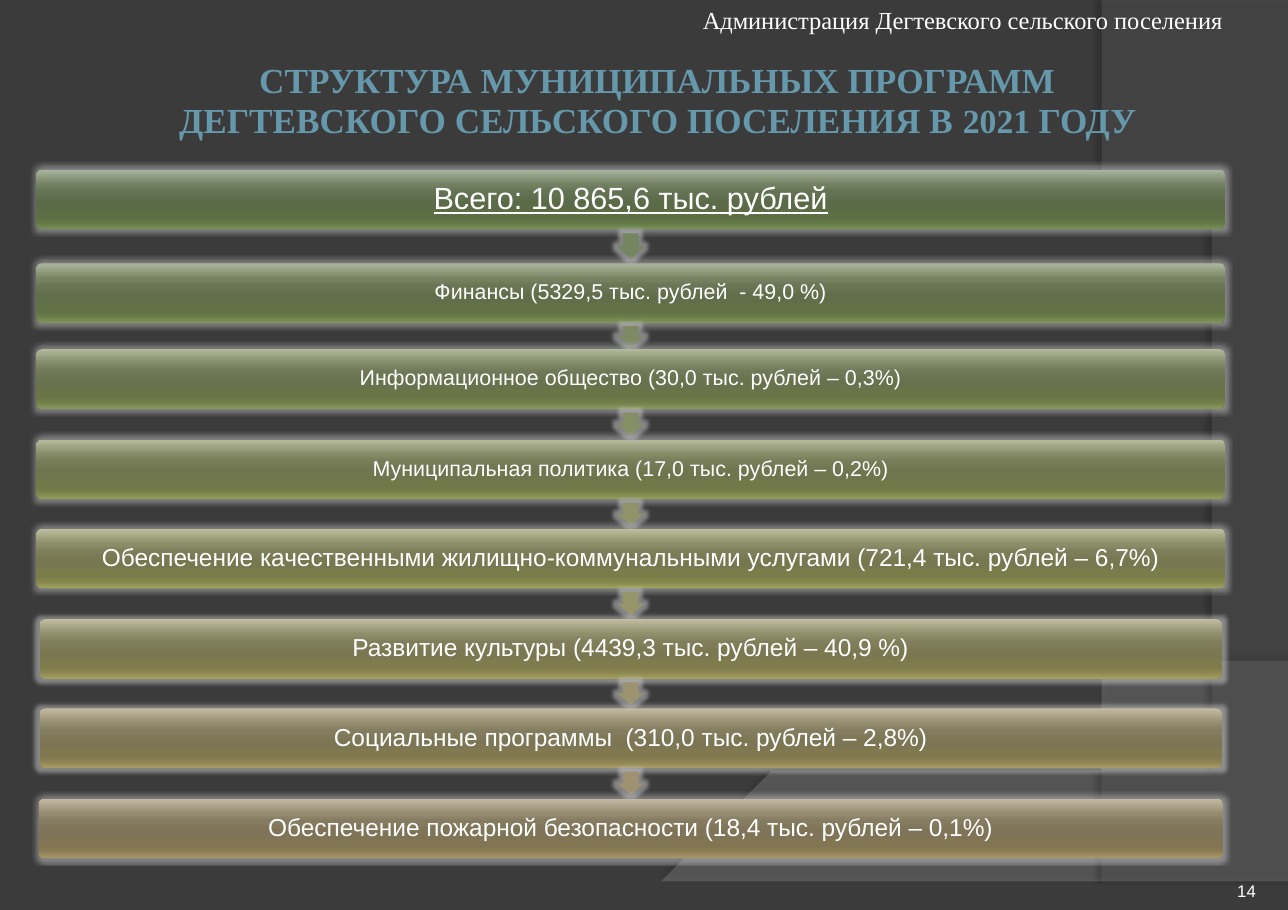
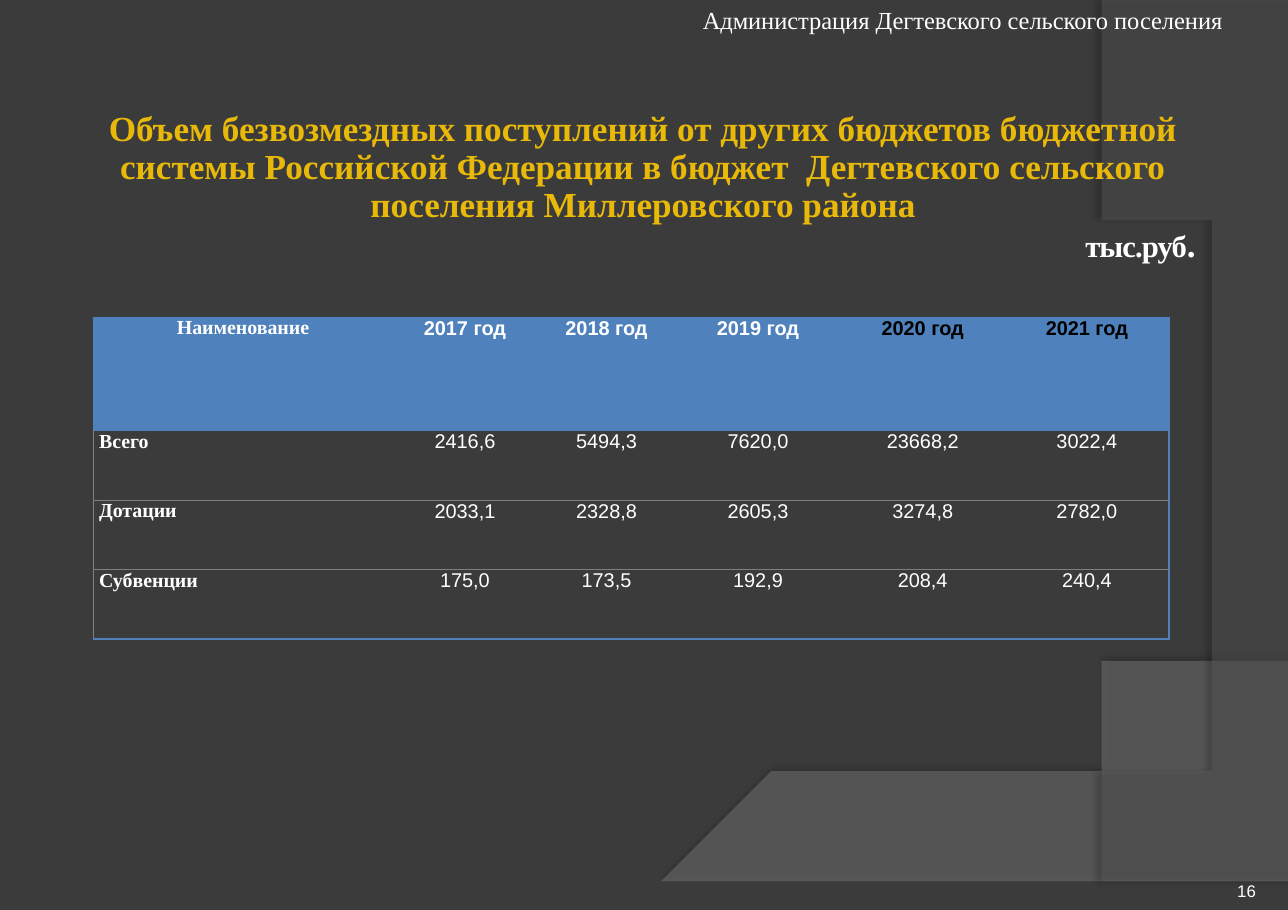
"""Build two budget slides: the programme structure and the table of transfers."""
import pptx
import pptx.util
import pptx.dml.color
import pptx.enum.shapes
import pptx.enum.text
import pptx.oxml
import pptx.oxml.ns

Inches, Pt = pptx.util.Inches, pptx.util.Pt
RGBColor = pptx.dml.color.RGBColor
SHAPE = pptx.enum.shapes.MSO_SHAPE
ALIGN = pptx.enum.text.PP_ALIGN
ANCHOR = pptx.enum.text.MSO_ANCHOR
qn = pptx.oxml.ns.qn
NS = pptx.oxml.ns.nsdecls("a")

DARK = RGBColor(0x3B, 0x3B, 0x3B)
WAVE = RGBColor(0x7F, 0x7F, 0x7F)
ARC = RGBColor(0x5E, 0x5E, 0x5E)
WHITE = RGBColor(0xFF, 0xFF, 0xFF)
BLACK = RGBColor(0, 0, 0)
TEAL = RGBColor(0x65, 0x98, 0xAA)
GOLD = RGBColor(0xE9, 0xB9, 0x0A)
BLUE = RGBColor(0x4F, 0x81, 0xBD)
GLOW = RGBColor(0xD0, 0xD0, 0xD0)
SERIF, SANS = "Times New Roman", "Arial"


def put(tf, text, size=16, color=WHITE, font=SANS, bold=False, underline=False,
        align=ALIGN.LEFT, spacing=None, anchor=None, inset=None):
    p = tf.paragraphs[0]
    p.alignment = align
    if spacing is not None:
        p.line_spacing = spacing
    if anchor is not None:
        tf.vertical_anchor = anchor
    if inset is not None:
        tf.word_wrap = True
        tf.auto_size = pptx.enum.text.MSO_AUTO_SIZE.NONE
        tf.margin_left = tf.margin_right = Inches(inset)
        tf.margin_top = tf.margin_bottom = Inches(inset)
    r = p.add_run()
    r.text = text
    r.font.size, r.font.name = Pt(size), font
    r.font.bold, r.font.underline = bold, underline
    r.font.color.rgb = color
    return r


def add_effect(shape, tag, color, alpha, **attrs):
    shape.shadow.inherit = False
    values = " ".join(f'{k}="{v}"' for k, v in attrs.items())
    shape.element.spPr.find(qn("a:effectLst")).append(pptx.oxml.parse_xml(
        f'<a:{tag} {NS} {values}><a:srgbClr val="{color}">'
        f'<a:alpha val="{alpha * 1000}"/></a:srgbClr></a:{tag}>'))


prs = pptx.Presentation()
prs.slide_width, prs.slide_height = Inches(11.69), Inches(8.26)
master = prs.slide_master
master.background.fill.solid()
master.background.fill.fore_color.rgb = DARK
slides = [prs.slides.add_slide(prs.slide_layouts[5]) for _ in range(2)]

curves = [
    (WAVE, 45, 35, 3.5, 270, [(0, 7.77), (0, 8.27), (11.69, 8.27)],
     [(11.69, 5.73), (6.54, 8.03), (4.57, 7.92), (0, 7.77)]),
    (ARC, 40, 45, 4, 180, [(11.69, 0.02), (11.69, 8.26)],
     [(9.6, 8.26), (10.93, 6.82), (11.9, 3.31), (9.36, 0)]),
]
for i, (color, alpha, shade, dist, angle, corners, bezier) in enumerate(curves):
    points = list(corners)
    for step in range(61):
        t = step / 60
        weights = ((1 - t) ** 3, 3 * t * (1 - t) ** 2, 3 * t * t * (1 - t), t ** 3)
        points.append(tuple(sum(w * pt[axis] for w, pt in zip(weights, bezier))
                            for axis in (0, 1)))
    builder = slides[0].shapes.build_freeform(*points[0], scale=Inches(1))
    builder.add_line_segments(points[1:], close=True)
    sp = builder.convert_to_shape()
    sp.line.fill.background()
    sp.fill.solid()
    sp.fill.fore_color.rgb = color
    sp.element.spPr.find(".//" + qn("a:srgbClr")).append(
        pptx.oxml.parse_xml(f'<a:alpha {NS} val="{alpha * 1000}"/>'))
    add_effect(sp, "outerShdw", BLACK, shade, blurRad=Pt(4), dist=Pt(dist),
               dir=angle * 60000, rotWithShape=0)
    sp.element.nvSpPr.cNvPr.id = 20 + i
    master.element.cSld.spTree.insert(2 + i, sp.element)

titles = [
    ((1.51, 0.55, 8.92, 0.73), TEAL, 26,
     [("СТРУКТУРА МУНИЦИПАЛЬНЫХ ПРОГРАММ ДЕГТЕВСКОГО СЕЛЬСКОГО ПОСЕЛЕНИЯ В ", 23),
      ("2021 ", 22), ("ГОДУ", 23)]),
    ((0.79, 1, 10.1, 1.05), GOLD, 25,
     [("Объем безвозмездных поступлений от других бюджетов бюджетной системы "
       "Российской Федерации в бюджет  Дегтевского сельского поселения "
       "Миллеровского района", 23)]),
]
for s, number, (box, color, spacing, runs) in zip(slides, ("14", "16"), titles):
    title = s.shapes.title
    title.left, title.top, title.width, title.height = map(Inches, box)
    for text, size in runs:
        put(title.text_frame, text, size=size, color=color, font=SERIF, bold=True,
            align=ALIGN.CENTER, spacing=Pt(spacing), anchor=ANCHOR.TOP, inset=0)
    header = s.shapes.add_textbox(Inches(6.28), 0, Inches(5.42), Inches(0.37))
    header.text_frame.word_wrap = True
    put(header.text_frame, "Администрация Дегтевского сельского поселения", font=SERIF)
    page = s.shapes.add_textbox(Inches(10.43), Inches(7.74), Inches(0.97), Inches(0.44))
    put(page.text_frame, number, size=11, align=ALIGN.RIGHT, anchor=ANCHOR.BOTTOM, inset=0)

s = slides[0]
STOPS = (0, 25, 38, 55, 80, 88, 100)
CENTER, BAR_H = 5.725, 0.54
bars = [
    (1.54, 10.79, 20, "Всего: 10 865,6 тыс. рублей",
     "A9B59D 728062 647254 5B6B48 5B6E44 607645 769058", "748560"),
    (2.39, 10.79, 14, "Финансы (5329,5 тыс. рублей  - 49,0 %)",
     "AEB89D 788464 6A7555 616E4A 627146 687A47 7F9459", "7D8A63"),
    (3.17, 10.79, 14, "Информационное общество (30,0 тыс. рублей – 0,3%)",
     "B2BA9E 7E8766 707857 68724C 697547 707D48 89995B", "868E65"),
    (3.99, 10.79, 14, "Муниципальная политика (17,0 тыс. рублей – 0,2%)",
     "B8BC9F 858A67 767B58 6F754D 717849 79814A 949D5D", "8F9368"),
    (4.8, 10.79, 16, "Обеспечение качественными жилищно-коммунальными услугами "
     "(721,4 тыс. рублей – 6,7%)",
     "BEBF9F 8C8E69 7D7E5A 77784F 7A7C4A 83854B 9FA25F", "97966B"),
    (5.62, 10.73, 16, "Развитие культуры (4439,3 тыс. рублей – 40,9 %)",
     "C1BEA0 908E6B 817E5C 7B7851 7E7B4C 87834E A5A062", "9B946F"),
    (6.43, 10.73, 16, "Социальные программы  (310,0 тыс. рублей – 2,8%)",
     "C3BCA2 938C6E 837C5E 7D7654 80784F 8A8051 A89C65", "9E9273"),
    (7.25, 10.75, 16, "Обеспечение пожарной безопасности (18,4 тыс. рублей – 0,1%)",
     "C4BAA3 958B71 857B60 7F7457 827552 8C7C54 AA9868", None),
]
for i, (top, width, size, text, shades, arrow_color) in enumerate(bars):
    bar = s.shapes.add_shape(SHAPE.ROUNDED_RECTANGLE, Inches(CENTER - width / 2),
                             Inches(top), Inches(width), Inches(BAR_H))
    bar.adjustments[0] = 0.1
    bar.line.fill.background()
    bar.fill.gradient()
    bar.fill.gradient_angle = 270
    stops = bar.element.spPr.find(".//" + qn("a:gsLst"))
    stops.clear()
    for pos, shade in zip(STOPS, shades.split()):
        stops.append(pptx.oxml.parse_xml(
            f'<a:gs {NS} pos="{pos * 1000}"><a:srgbClr val="{shade}"/></a:gs>'))
    add_effect(bar, "glow", GLOW, 50, rad=Pt(5))
    put(bar.text_frame, text, size=size, underline=i == 0, align=ALIGN.CENTER,
        spacing=0.9, anchor=ANCHOR.MIDDLE, inset=0.07)
    if arrow_color:
        bottom = top + BAR_H
        gap = bars[i + 1][0] - bottom
        arrow = s.shapes.add_shape(SHAPE.DOWN_ARROW, Inches(CENTER - 0.12),
                                   Inches(bottom + gap / 8), Inches(0.24),
                                   Inches(gap * 0.75))
        arrow.adjustments[0], arrow.adjustments[1] = 0.6, 0.5
        arrow.line.fill.background()
        arrow.fill.solid()
        arrow.fill.fore_color.rgb = RGBColor.from_string(arrow_color)
        add_effect(arrow, "glow", GLOW, 50, rad=Pt(5))

s = slides[1]
unit = s.shapes.add_textbox(Inches(9.85), Inches(2.05), Inches(1.42), Inches(0.35))
r = put(unit.text_frame, "тыс.руб", size=20, font=SERIF, bold=True,
        spacing=Pt(25), inset=0)
r.font._element.set("spc", "-60")
put(unit.text_frame, ".", size=23, font=SERIF, bold=True, spacing=Pt(25))

rows = [
    ("Наименование", "2017 год", "2018 год", "2019 год", "2020 год", "2021 год"),
    ("Всего", "2416,6", "5494,3", "7620,0", "23668,2", "3022,4"),
    ("Дотации", "2033,1", "2328,8", "2605,3", "3274,8", "2782,0"),
    ("Субвенции", "175,0", "173,5", "192,9", "208,4", "240,4"),
]
widths, heights = (2.71, 1.32, 1.25, 1.5, 1.49, 1.49), (1.03, 0.63, 0.63, 0.63)
table = s.shapes.add_table(len(rows), len(widths), Inches(0.85), Inches(2.88),
                           Inches(sum(widths)), Inches(sum(heights))).table
table.first_row = table.horz_banding = False
for col, width in zip(table.columns, widths):
    col.width = Inches(width)
for row, height in zip(table.rows, heights):
    row.height = Inches(height)
last_row, last_col = len(rows) - 1, len(widths) - 1
for y, row in enumerate(rows):
    for x, text in enumerate(row):
        cell = table.cell(y, x)
        cell.margin_left = cell.margin_right = Inches(0.05)
        cell.margin_top = cell.margin_bottom = 0
        put(cell.text_frame, text, size=13, font=SANS if x else SERIF,
            bold=x == 0 or y == 0, color=BLACK if y == 0 and x > 3 else WHITE,
            align=ALIGN.CENTER if x or y == 0 else ALIGN.LEFT)
        if y == 0:
            cell.fill.solid()
            cell.fill.fore_color.rgb = BLUE
        else:
            cell.fill.background()
        borders = {
            "lnL": (BLUE if y == 0 else WAVE) if x == 0 else None,
            "lnR": BLUE if x == last_col else None,
            "lnT": BLUE if y < 2 else WAVE,
            "lnB": BLUE if y in (0, last_row) else WAVE,
        }
        tcPr = cell._tc.get_or_add_tcPr()
        for i, (side, color) in enumerate(borders.items()):
            paint = (f'<a:solidFill><a:srgbClr val="{color}"/></a:solidFill>'
                     if color else "<a:noFill/>")
            tcPr.insert(i, pptx.oxml.parse_xml(
                f'<a:{side} {NS} w="{Pt(1)}">{paint}</a:{side}>'))

prs.save("out.pptx")
